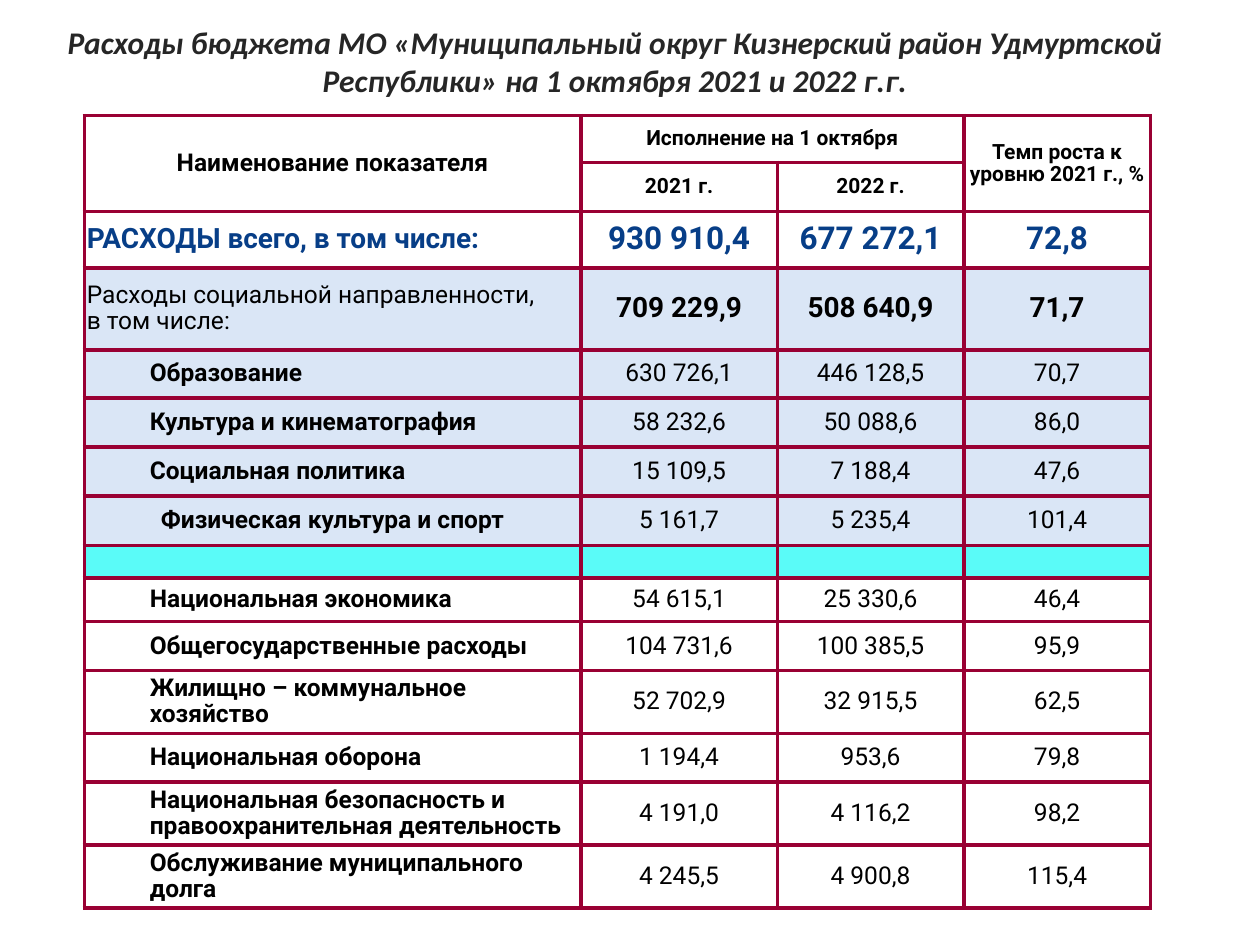
"""Build a slide with a table of district budget expenses for 2021 and 2022."""
import pptx
import pptx.dml.color
import pptx.enum.text
import pptx.oxml.ns
import pptx.util
from lxml import etree

Cm = pptx.util.Cm
RGBColor = pptx.dml.color.RGBColor
ALIGN = pptx.enum.text.PP_ALIGN
MIDDLE = pptx.enum.text.MSO_ANCHOR.MIDDLE
qn = pptx.oxml.ns.qn

BLACK = RGBColor(0x00, 0x00, 0x00)
CHARCOAL = RGBColor(0x26, 0x26, 0x26)
NAVY = RGBColor(0x07, 0x3E, 0x87)
CRIMSON = RGBColor(0x99, 0x00, 0x33)
WHITE = RGBColor(0xFF, 0xFF, 0xFF)
PALE_BLUE = RGBColor(0xDA, 0xE6, 0xF6)
CYAN = RGBColor(0x5A, 0xFB, 0xF8)


def write_text(frame, text, size=14, font="Roboto", color=BLACK, bold=False,
               italic=False, align=ALIGN.CENTER, spacing=0.9, indent=0):
    frame.word_wrap = True
    for number, line in enumerate(text.split("\n")):
        paragraph = frame.add_paragraph() if number else frame.paragraphs[0]
        paragraph.alignment = align
        paragraph.line_spacing = spacing
        if indent:
            paragraph.level = 1
            properties = paragraph._p.get_or_add_pPr()
            properties.set("marL", str(Cm(indent)))
            properties.set("indent", "0")
        if not line:
            etree.SubElement(paragraph._p, qn("a:endParaRPr"), sz=str(size * 100))
            continue
        run = paragraph.add_run()
        run.text = line
        run.font.size = pptx.util.Pt(size)
        run.font.name = font
        run.font.color.rgb = color
        run.font.bold = bold
        run.font.italic = italic


def style_cell(cell, fill):
    cell.fill.solid()
    cell.fill.fore_color.rgb = fill
    cell.vertical_anchor = MIDDLE
    cell.margin_left = cell.margin_right = Cm(0.05)
    cell.margin_top = cell.margin_bottom = Cm(0.05)
    properties = cell._tc.get_or_add_tcPr()
    for position, side in enumerate(("a:lnL", "a:lnR", "a:lnT", "a:lnB")):
        border = etree.Element(qn(side), w=str(pptx.util.Pt(2.25)))
        solid = etree.SubElement(border, qn("a:solidFill"))
        etree.SubElement(solid, qn("a:srgbClr"), val=str(CRIMSON))
        properties.insert(position, border)


presentation = pptx.Presentation()
presentation.slide_width = Cm(25.4)
presentation.slide_height = Cm(19.05)
slide = presentation.slides.add_slide(presentation.slide_layouts[5])

title = slide.shapes.title
title.left, title.top, title.width, title.height = Cm(0.4), Cm(0.33), Cm(24), Cm(1.8)
title.text_frame.auto_size = pptx.enum.text.MSO_AUTO_SIZE.NONE
title.text_frame.vertical_anchor = MIDDLE
write_text(title.text_frame,
           "Расходы бюджета МО «Муниципальный округ Кизнерский район Удмуртской "
           "Республики» на 1 октября 2021 и 2022 г.г.",
           size=18, font="Calibri", color=CHARCOAL, bold=True, italic=True, spacing=1.0)

HEADER = {"name": {"bold": True}, "value": {"size": 12, "bold": True}}
TOTAL = {"name": {"size": 16, "color": NAVY, "bold": True, "align": ALIGN.LEFT},
         "value": {"size": 18, "color": NAVY, "bold": True}}
SUBTOTAL = {"name": {"align": ALIGN.LEFT}, "value": {"size": 16, "bold": True}}
ITEM = {"name": {"bold": True, "align": ALIGN.LEFT, "indent": 1.27}, "value": {}}
CENTERED = {"name": {"bold": True}, "value": {}}
DIVIDER = {"name": {"size": 10}, "value": {"size": 10}}

budget_rows = [
    (0.94, WHITE, HEADER, ("Наименование показателя", "Исполнение на 1 октября", "",
                           "Темп роста к уровню 2021 г., %")),
    (0.97, WHITE, HEADER, ("", "2021 г.", "2022 г.", "")),
    (1.14, WHITE, TOTAL, ("РАСХОДЫ всего, в том числе:", "930 910,4", "677 272,1", "72,8")),
    (1.65, PALE_BLUE, SUBTOTAL, ("Расходы социальной направленности,\nв том числе:",
                                 "709 229,9", "508 640,9", "71,7")),
    (0.97, PALE_BLUE, ITEM, ("Образование", "630 726,1", "446 128,5", "70,7")),
    (0.99, PALE_BLUE, ITEM, ("Культура и кинематография", "58 232,6", "50 088,6", "86,0")),
    (0.99, PALE_BLUE, ITEM, ("Социальная политика", "15 109,5", "7 188,4", "47,6")),
    (0.99, PALE_BLUE, CENTERED, ("Физическая культура и спорт", "5 161,7", "5 235,4", "101,4")),
    (0.66, CYAN, DIVIDER, ("", "", "", "")),
    (0.88, WHITE, ITEM, ("Национальная экономика", "54 615,1", "25 330,6", "46,4")),
    (0.99, WHITE, ITEM, ("Общегосударственные расходы", "104 731,6", "100 385,5", "95,9")),
    (1.26, WHITE, ITEM, ("Жилищно – коммунальное хозяйство", "52 702,9", "32 915,5", "62,5")),
    (0.98, WHITE, ITEM, ("Национальная оборона", "1 194,4", "953,6", "79,8")),
    (1.27, WHITE, ITEM, ("Национальная безопасность и правоохранительная деятельность",
                         "4 191,0", "4 116,2", "98,2")),
    (1.27, WHITE, ITEM, ("Обслуживание муниципального долга", "4 245,5", "4 900,8", "115,4")),
]
column_widths = (10.01, 3.96, 3.76, 3.76)

budget = slide.shapes.add_table(
    len(budget_rows), len(column_widths), Cm(1.7), Cm(2.33),
    Cm(sum(column_widths)), Cm(sum(row[0] for row in budget_rows))).table
budget.first_row = False
budget.horz_banding = False
for column, width in zip(budget.columns, column_widths):
    column.width = Cm(width)

for row, (height, fill, style, texts) in zip(budget.rows, budget_rows):
    row.height = Cm(height)
    for index, (cell, text) in enumerate(zip(row.cells, texts)):
        style_cell(cell, fill)
        write_text(cell.text_frame, text, **style["value" if index else "name"])

for first, last in (((0, 0), (1, 0)), ((0, 1), (0, 2)), ((0, 3), (1, 3))):
    budget.cell(*first).merge(budget.cell(*last))

presentation.save("out.pptx")
